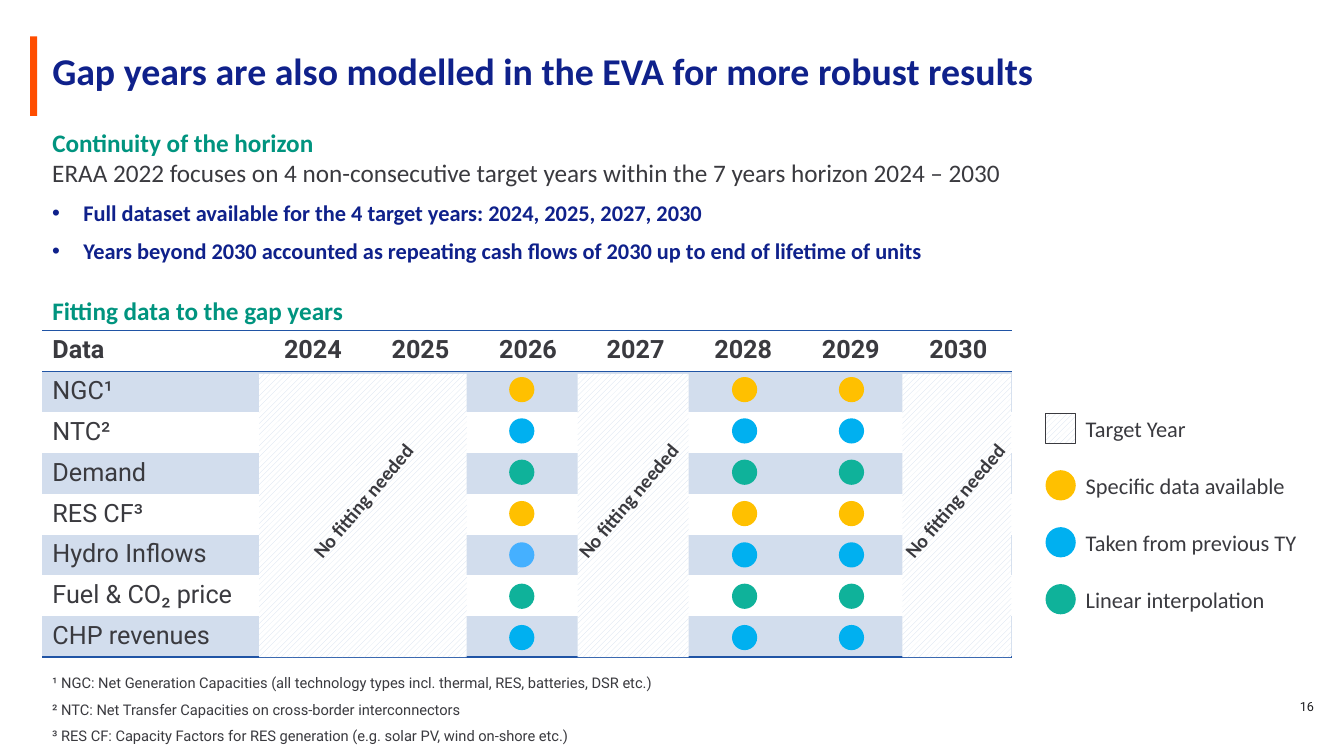
import pptx
import pptx.util
import pptx.dml.color
import pptx.enum.dml
import pptx.enum.shapes
import pptx.enum.text
import pptx.oxml
from pptx.oxml.ns import qn

RGB = pptx.dml.color.RGBColor
In, Pt = pptx.util.Inches, pptx.util.Pt
SHAPE = pptx.enum.shapes.MSO_SHAPE
ALIGN = pptx.enum.text.PP_ALIGN
ANCHOR = pptx.enum.text.MSO_ANCHOR

NAVY, GREEN, ORANGE = RGB(0x0F, 0x21, 0x8B), RGB(0x00, 0x94, 0x7F), RGB(0xFF, 0x4D, 0x00)
GREY, BLACK, WHITE = RGB(0x3A, 0x3A, 0x3F), RGB(0x1D, 0x1D, 0x20), RGB(0xFF, 0xFF, 0xFF)
RULE, BAND = RGB(0x20, 0x54, 0xA5), RGB(0xD2, 0xDD, 0xED)
YELLOW, BLUE = RGB(0xFF, 0xC0, 0x00), RGB(0x00, 0xB0, 0xF0)
TEAL, LIGHT_BLUE = RGB(0x0F, 0xB2, 0x9A), RGB(0x45, 0xB0, 0xFF)

# Content
TITLE = "Gap years are also modelled in the EVA for more robust results"
HORIZON = "Continuity of the horizon"
FOCUS = "ERAA 2022 focuses on 4 non-consecutive target years within the 7 years horizon 2024 – 2030"
BULLETS = [
    "Full dataset available for the 4 target years: 2024, 2025, 2027, 2030",
    "Years beyond 2030 accounted as repeating cash flows of 2030 up to end of lifetime of units",
]
FITTING = "Fitting data to the gap years"
HEADER = ["Data"] + [str(year) for year in range(2024, 2031)]
ROWS = [  # data set, how the gap years are filled
    ("NGC¹", YELLOW), ("NTC²", BLUE), ("Demand", TEAL), ("RES CF³", YELLOW),
    ("Hydro Inflows", BLUE), ("Fuel & CO₂ price", TEAL), ("CHP revenues", BLUE),
]
GAP_YEARS = [  # centre of the dot column, exceptions by data set
    (5.175, {"Hydro Inflows": LIGHT_BLUE}), (7.385, {}), (8.445, {}),
]
TARGET_PANELS = [  # left, width, centre of the label
    (2.57, 2.06, 3.6), (5.73, 1.1, 6.23), (8.95, 1.08, 9.47),
]
NO_FITTING = "No fitting needed"
LEGEND = [
    ("Target Year", None), ("Specific data available", YELLOW),
    ("Taken from previous TY", BLUE), ("Linear interpolation", TEAL),
]
FOOTNOTES = [
    "¹ NGC: Net Generation Capacities (all technology types incl. thermal, RES, batteries, DSR etc.)",
    "² NTC: Net Transfer Capacities on cross-border interconnectors",
    "³ RES CF: Capacity Factors for RES generation (e.g. solar PV, wind on-shore etc.)",
]

# Grid
LEFT, TABLE_TOP, ROW_H = 0.42, 3.28, 0.405
NAME_W, YEAR_W = 2.15, 1.067
BODY_TOP = TABLE_TOP + 0.41
DOT, DOT_STEP = 0.25, 0.41
KEY_LEFT, KEY_TOP, KEY, KEY_STEP = 10.37, 4.1, 0.3, 0.565

prs = pptx.Presentation()
prs.slide_width, prs.slide_height = In(13.33), In(7.5)
s = prs.slides.add_slide(prs.slide_layouts[6])


def write(p, text, size=18, font="Calibri", color=GREY, bold=False,
          align=ALIGN.LEFT, spacing=None, before=0, bullet=False):
    if bullet:
        pPr = p._p.get_or_add_pPr()
        pPr.set("marL", str(In(0.31)))
        pPr.set("indent", str(-In(0.31)))
        pptx.oxml.parse_xml  # bullet element follows the spacing elements
    p.alignment = align
    if spacing:
        p.line_spacing = spacing
    if before:
        p.space_before = Pt(before)
    if bullet:
        pPr.append(pPr.makeelement(qn("a:buFont"), {"typeface": "Arial"}))
        pPr.append(pPr.makeelement(qn("a:buChar"), {"char": "•"}))
    r = p.add_run()
    r.text = text
    r.font.size, r.font.name, r.font.bold = Pt(size), font, bold
    r.font.color.rgb = color


def text_box(x, y, w, h, *lines, shapes=s.shapes, wrap=True, anchor=ANCHOR.TOP, **fmt):
    sp = shapes.add_textbox(In(x), In(y), In(w), In(h))
    tf = sp.text_frame
    tf.word_wrap, tf.vertical_anchor = wrap, anchor
    for i, line in enumerate(lines):
        write(tf.paragraphs[0] if i == 0 else tf.add_paragraph(), line, **fmt)
    return sp


def shape(kind, x, y, w, h, color=None, line=None, shapes=s.shapes):
    """Solid shape, or a hatched one when no colour is given."""
    sp = shapes.add_shape(kind, In(x), In(y), In(w), In(h))
    sp.shadow.inherit = False
    if color is None:
        sp.fill.patterned()
        sp.fill.pattern = pptx.enum.dml.MSO_PATTERN.WIDE_UPWARD_DIAGONAL
        sp.fill.fore_color.rgb, sp.fill.back_color.rgb = BAND, WHITE
    else:
        sp.fill.solid()
        sp.fill.fore_color.rgb = color
    if line is None:
        sp.line.fill.background()
    else:
        sp.line.color.rgb, sp.line.width = line, Pt(1)


def rule(cell, tags):
    tcPr = cell._tc.get_or_add_tcPr()
    for i, tag in enumerate(tags):
        ln = tcPr.makeelement(qn(tag), {"w": str(Pt(1))})
        fill = ln.makeelement(qn("a:solidFill"), {})
        fill.append(fill.makeelement(qn("a:srgbClr"), {"val": str(RULE)}))
        ln.append(fill)
        tcPr.insert(i, ln)


# Title, accent bar and page number
text_box(6.75, 6.82, 6.38, 0.4, "16", size=9, font="Roboto", color=BLACK,
         align=ALIGN.RIGHT, spacing=Pt(9), anchor=ANCHOR.MIDDLE)
shape(SHAPE.RECTANGLE, 0.3, 0.36, 0.07, 0.79, ORANGE)
text_box(LEFT, 0.51, 12.71, 0.39, TITLE, size=27, color=NAVY, bold=True,
         spacing=Pt(32), anchor=ANCHOR.MIDDLE)

# Introduction
text_box(LEFT, 1.15, 12.71, 0.48, HORIZON, color=GREEN, bold=True, spacing=Pt(26))
intro = text_box(LEFT, 1.55, 12.34, 1.19, FOCUS, spacing=0.9)
for bullet in BULLETS:
    write(intro.text_frame.add_paragraph(), bullet, size=16, color=NAVY, bold=True,
          spacing=0.9, before=10, bullet=True)
text_box(LEFT, 2.88, 3.12, 0.4, FITTING, color=GREEN, bold=True, wrap=False)

# Table
n_rows, n_cols = len(ROWS) + 1, len(HEADER)
frame = s.shapes.add_table(n_rows, n_cols, In(LEFT), In(TABLE_TOP),
                           In(NAME_W + YEAR_W * (n_cols - 1)), In(ROW_H * n_rows))
table = frame.table
table.first_row = table.horz_banding = False
table._tbl.tblPr[0].text = "{2D5ABB26-0587-4C30-8999-92F81FD0307C}"  # no style, no grid
for j, column in enumerate(table.columns):
    column.width = In(YEAR_W if j else NAME_W)
for i, row in enumerate(table.rows):
    row.height = In(ROW_H)
    for j, cell in enumerate(row.cells):
        if i % 2:
            cell.fill.solid()
            cell.fill.fore_color.rgb = BAND
        else:
            cell.fill.background()
        if i == 0:
            rule(cell, ["a:lnT", "a:lnB"])
        elif i == n_rows - 1:
            rule(cell, ["a:lnB"])
        if i == 0 or j == 0:
            write(cell.text_frame.paragraphs[0], ROWS[i - 1][0] if i else HEADER[j],
                  font="Roboto", bold=i == 0, align=ALIGN.CENTER if j else ALIGN.LEFT)

# Hatched target years
for x, w, _ in TARGET_PANELS:
    shape(SHAPE.RECTANGLE, x, 3.71, w, 2.81)

# Dots of the gap years
for centre, exceptions in GAP_YEARS:
    dots = s.shapes.add_group_shape().shapes
    for i, (name, color) in enumerate(ROWS):
        shape(SHAPE.FLOWCHART_CONNECTOR, centre - DOT / 2, BODY_TOP + 0.05 + i * DOT_STEP,
              DOT, DOT, exceptions.get(name, color), shapes=dots)

# Legend
legend = s.shapes.add_group_shape().shapes
for i, (label, color) in enumerate(LEGEND):
    y = KEY_TOP + i * KEY_STEP
    shape(SHAPE.FLOWCHART_CONNECTOR if color else SHAPE.RECTANGLE, KEY_LEFT, y, KEY, KEY,
          color, line=None if color else GREY, shapes=legend)
    text_box(KEY_LEFT + KEY, y - 0.03, 2.32, 0.37, label, size=16, wrap=False, shapes=legend)

# Footnotes
text_box(LEFT, 6.55, 10.34, 0.95, *FOOTNOTES, size=10.5, font="Roboto", spacing=1.5)

# Slanted labels over the target years
for _, _, centre in TARGET_PANELS:
    sp = text_box(centre - 1.16, 4.8, 2.32, 0.34, NO_FITTING, size=14, bold=True,
                  align=ALIGN.CENTER)
    sp.rotation = 310.4

prs.save("out.pptx")
